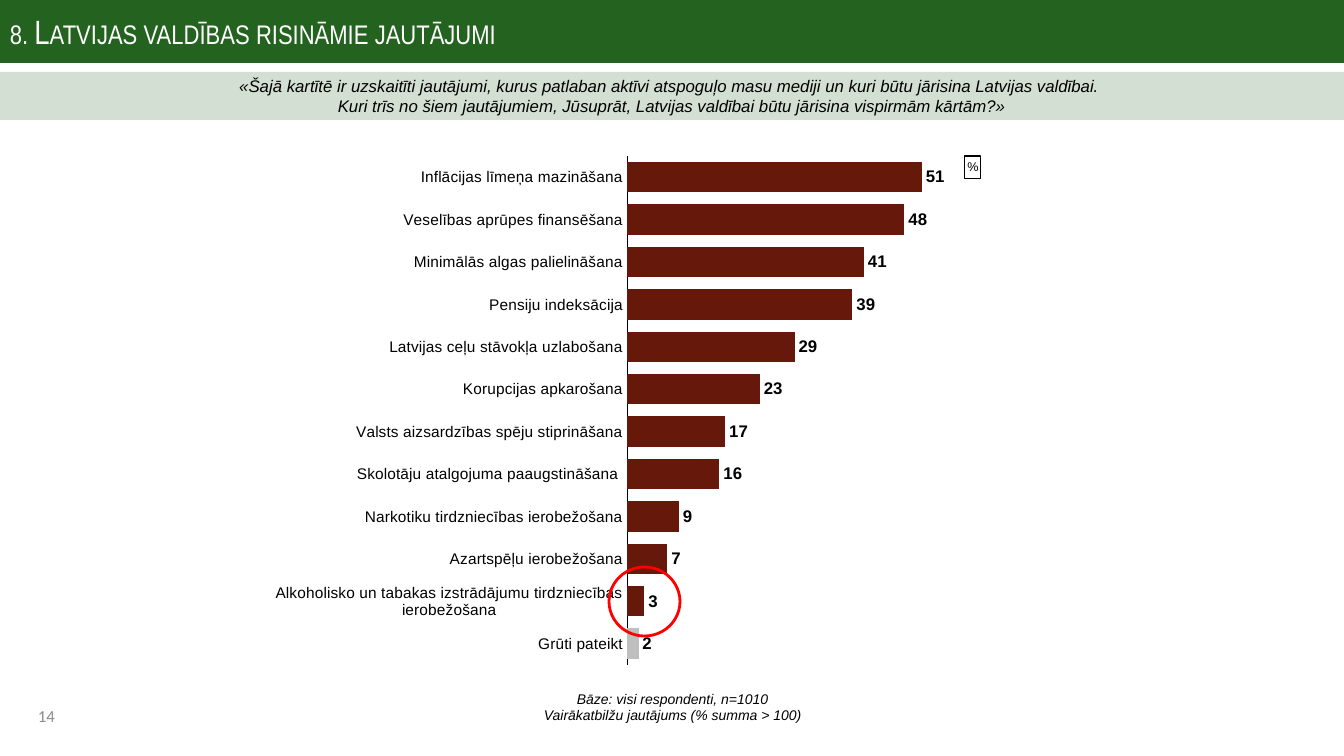
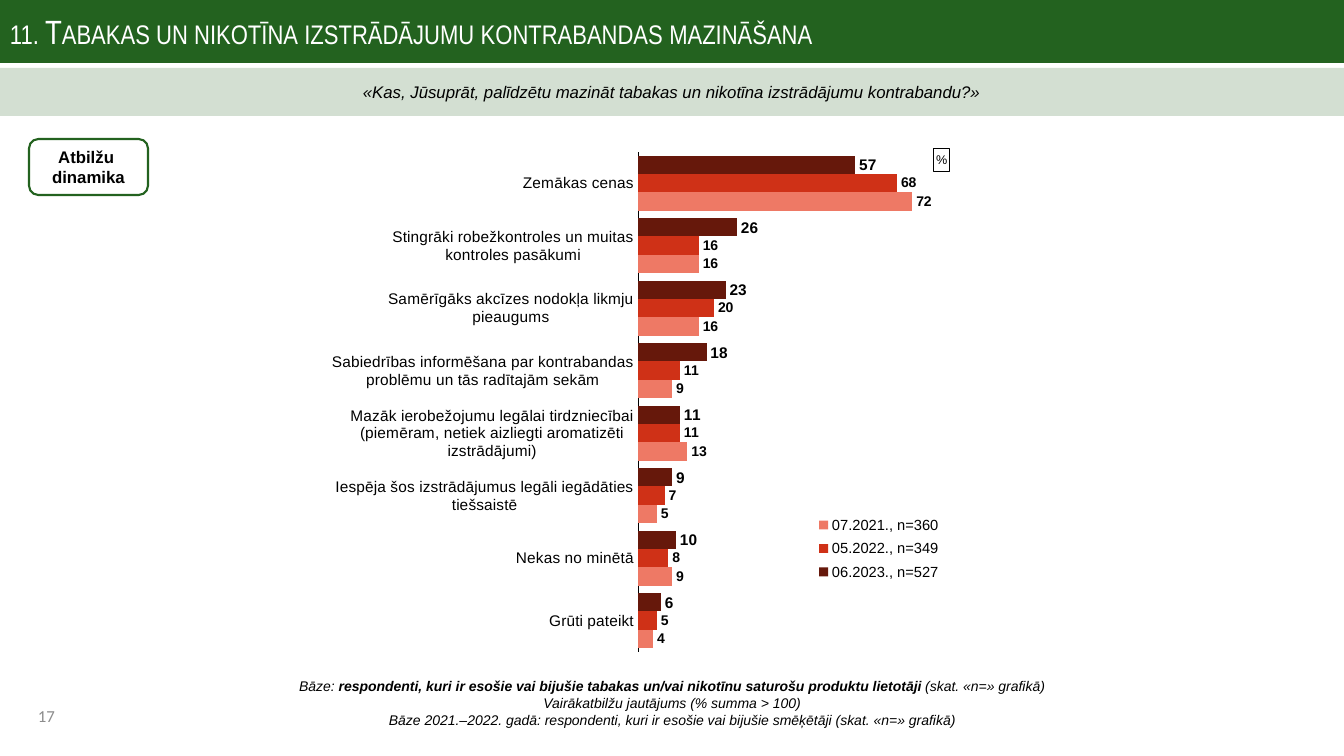
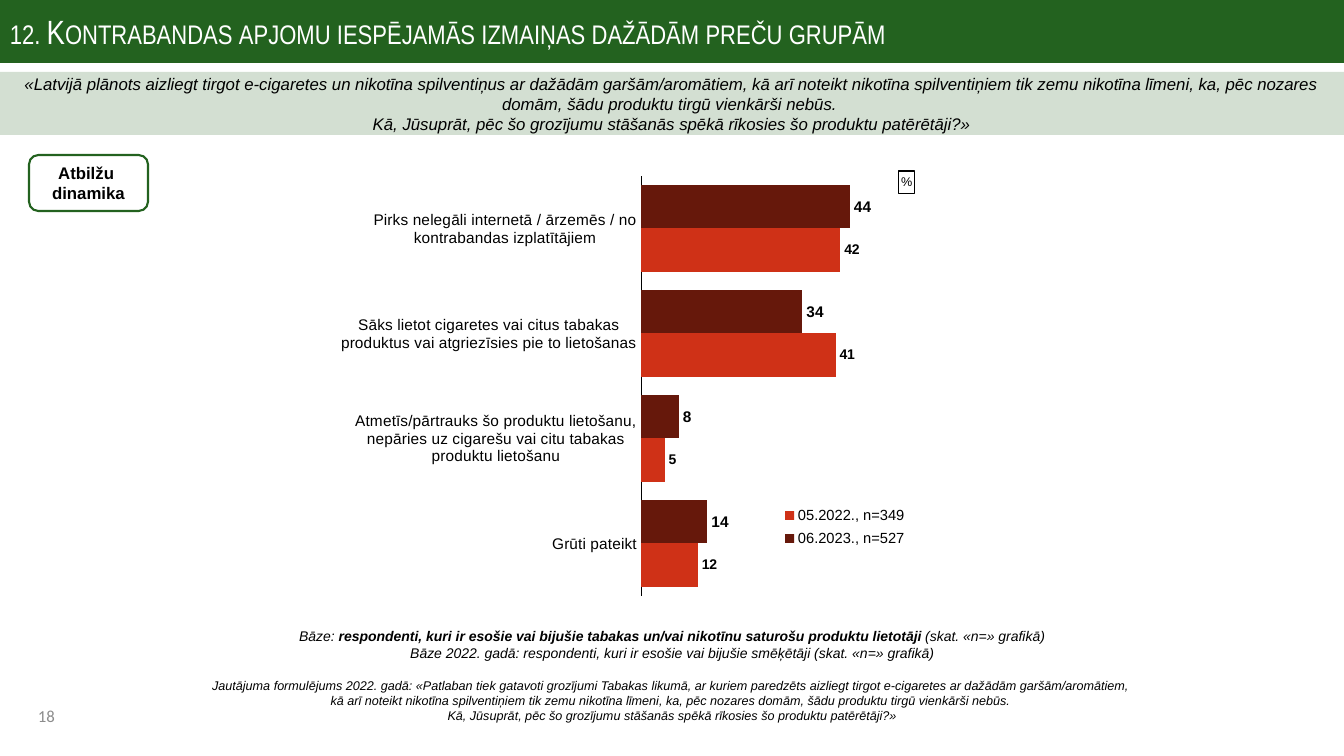
import copy
from dataclasses import dataclass

import pptx
import pptx.chart.data
import pptx.dml.color
import pptx.enum.chart
import pptx.enum.shapes
import pptx.enum.text
import pptx.oxml
import pptx.oxml.ns
import pptx.util

PX = 914400 / 100.8
SLIDE_WIDTH, SLIDE_HEIGHT = 1344, 756
SHAPE = pptx.enum.shapes.MSO_SHAPE
ALIGN = pptx.enum.text.PP_ALIGN
ANCHOR = pptx.enum.text.MSO_ANCHOR
qn = pptx.oxml.ns.qn


@dataclass(frozen=True)
class Theme:
    green: str = "23621F"
    white: str = "FFFFFF"
    black: str = "000000"
    grey: str = "8C8C8C"
    neutral_bar: str = "BFBFBF"
    highlight: str = "FF0000"
    wave_2023: str = "66180B"
    wave_2022: str = "CF3117"
    wave_2021: str = "EE7965"
    body_font: str = "Arial"
    title_font: str = "Arial Narrow"
    number_font: str = "Calibri"
    title_size: float = 24
    question_size: float = 12
    number_size: float = 12
    base_size: float = 10
    small_size: float = 9
    category_size: float = 11
    legend_size: float = 10.5
    band_alpha: int = 20


THEME = Theme()


@dataclass(frozen=True)
class Series:
    name: str
    color: str
    label_size: float
    values: tuple


def emu(box):
    return [pptx.util.Emu(round(length * PX)) for length in box]


def rgb(color):
    return pptx.dml.color.RGBColor.from_string(color)


def style_font(font, size, color=THEME.black, name=THEME.body_font, bold=False, italic=False):
    font.size = pptx.util.Pt(size)
    font.color.rgb = rgb(color)
    font.name = name
    font.bold = bold
    font.italic = italic


def write_text(shape, paragraphs, size, align=ALIGN.CENTER, anchor=ANCHOR.MIDDLE, **style):
    """Fill a shape; a tuple is one paragraph whose every second part is bold."""
    frame = shape.text_frame
    frame.word_wrap = True
    frame.vertical_anchor = anchor
    for index, content in enumerate(paragraphs):
        paragraph = frame.add_paragraph() if index else frame.paragraphs[0]
        paragraph.alignment = align
        if isinstance(content, str):
            paragraph.text = content
        else:
            for part in content:
                paragraph.add_run().text = part
        for run in paragraph.runs:
            style_font(run.font, size, **style)
        if not isinstance(content, str):
            for run in paragraph.runs[1::2]:
                run.font.bold = True
        for line_break in paragraph._p.findall(qn("a:br")):
            line_break.insert(0, copy.deepcopy(paragraph.runs[0]._r.rPr))
    return frame.paragraphs


def add_box(slide, kind, box, fill=None, line=None, line_width=1):
    shape = slide.shapes.add_shape(kind, *emu(box))
    shape.shadow.inherit = False
    if fill:
        shape.fill.solid()
        shape.fill.fore_color.rgb = rgb(fill)
    else:
        shape.fill.background()
    if line:
        shape.line.color.rgb = rgb(line)
        shape.line.width = pptx.util.Pt(line_width)
    else:
        shape.line.fill.background()
    return shape


def add_frame(presentation, title, number):
    """Add a slide with the title bar and page number that all slides share."""
    slide = presentation.slides.add_slide(presentation.slide_layouts[6])
    page_number = slide.shapes.add_textbox(*emu((28, 701, 143, 40)))
    write_text(page_number, [str(number)], THEME.number_size, ALIGN.LEFT, ANCHOR.TOP,
               color=THEME.grey, name=THEME.number_font)
    bar = add_box(slide, SHAPE.RECTANGLE, (0, 0, SLIDE_WIDTH, 63), THEME.green)
    paragraphs = write_text(bar, [title], THEME.title_size, ALIGN.LEFT,
                            color=THEME.white, name=THEME.title_font)
    paragraphs[0].runs[0]._r.rPr.set("cap", "small")
    return slide


def add_question(slide, top, height, paragraphs):
    band = add_box(slide, SHAPE.RECTANGLE, (0, top, SLIDE_WIDTH, height), THEME.green)
    color = band._element.spPr.find(qn("a:solidFill")).find(qn("a:srgbClr"))
    alpha = pptx.oxml.parse_xml(
        f'<a:alpha {pptx.oxml.ns.nsdecls("a")} val="{THEME.band_alpha * 1000}"/>')
    color.append(alpha)
    write_text(band, paragraphs, THEME.question_size, italic=True)


def add_base_note(slide, box, paragraphs):
    note = slide.shapes.add_textbox(*emu(box))
    return write_text(note, paragraphs, THEME.base_size, italic=True)


def add_trend_tag(slide, top):
    tag = add_box(slide, SHAPE.ROUNDED_RECTANGLE, (29, top, 119, 56),
                  line=THEME.green, line_width=1.5)
    write_text(tag, ["Atbilžu \ndinamika"], THEME.question_size, bold=True)


def set_layout(element, index, chart_box, part, inner=False, sized=True):
    """Pin a chart part, given in px from the chart's corner, at a child index."""
    for old in element.findall(qn("c:layout")):
        element.remove(old)
    width, height = chart_box[2:]
    target = '<c:layoutTarget val="inner"/>' if inner else ""
    modes = "".join(f'<c:{axis}Mode val="edge"/>' for axis in "xy")
    fractions = zip("xywh" if sized else "xy", part, (width, height, width, height))
    values = "".join(f'<c:{key} val="{length / whole:.4f}"/>'
                     for key, length, whole in fractions)
    element.insert(index, pptx.oxml.parse_xml(
        f'<c:layout {pptx.oxml.ns.nsdecls("c")}><c:manualLayout>'
        f'{target}{modes}{values}</c:manualLayout></c:layout>'))


def add_bar_chart(slide, box, categories, series_list, maximum, plot_box, unit_at,
                  legend_box=None):
    data = pptx.chart.data.CategoryChartData(number_format="0")
    data.categories = categories
    for series in series_list:
        data.add_series(series.name, series.values)
    chart = slide.shapes.add_chart(
        pptx.enum.chart.XL_CHART_TYPE.BAR_CLUSTERED, *emu(box), data).chart
    style_font(chart.font, THEME.small_size)
    space = chart._chartSpace

    chart.has_title = True
    title = chart.chart_title
    title.text_frame.text = "%"
    style_font(title.text_frame.paragraphs[0].runs[0].font, THEME.small_size)
    title.format.line.color.rgb = rgb(THEME.black)
    title.format.line.width = pptx.util.Pt(0.75)
    set_layout(space.xpath("c:chart/c:title")[0], 1, box, unit_at, sized=False)

    category_axis = chart.category_axis
    category_axis.reverse_order = True
    category_axis.major_tick_mark = pptx.enum.chart.XL_TICK_MARK.NONE
    category_axis.format.line.color.rgb = rgb(THEME.black)
    category_axis.format.line.width = pptx.util.Pt(0.25)
    style_font(category_axis.tick_labels.font, THEME.category_size)
    value_axis = chart.value_axis
    value_axis.visible = False
    value_axis.has_major_gridlines = False
    value_axis.minimum_scale = 0
    value_axis.maximum_scale = maximum
    value_axis.major_unit = 20

    plot = chart.plots[0]
    plot.gap_width = 40
    plot.overlap = 0
    plot.vary_by_categories = False
    for bars, series in zip(plot.series, series_list):
        bars.format.fill.solid()
        bars.format.fill.fore_color.rgb = rgb(series.color)
        bars.invert_if_negative = False
        labels = bars.data_labels
        labels.show_value = True
        labels.number_format = "0"
        labels.number_format_is_linked = False
        labels.position = pptx.enum.chart.XL_LABEL_POSITION.OUTSIDE_END
        style_font(labels.font, series.label_size, bold=True)
    set_layout(space.xpath("c:chart/c:plotArea")[0], 0, box, plot_box, inner=True)

    chart.has_legend = legend_box is not None
    if legend_box:
        chart.legend.position = pptx.enum.chart.XL_LEGEND_POSITION.RIGHT
        chart.legend.include_in_layout = False
        style_font(chart.legend.font, THEME.legend_size)
        set_layout(space.xpath("c:chart/c:legend")[0], 1, box, legend_box)
    return chart


def wave_2023(*values):
    return Series("06.2023., n=527", THEME.wave_2023, 11, values)


def wave_2022(*values):
    return Series("05.2022., n=349", THEME.wave_2022, 10, values)


def wave_2021(*values):
    return Series("07.2021., n=360", THEME.wave_2021, 10, values)


USER_BASE = (
    "Bāze: ",
    "respondenti, kuri ir esošie vai bijušie tabakas un/vai nikotīnu saturošu produktu lietotāji ",
    "(skat. «n=» grafikā)",
)
MULTIPLE_ANSWERS = "Vairākatbilžu jautājums (% summa > 100)"


def build_government_issues(presentation):
    slide = add_frame(presentation, "8. Latvijas valdības risināmie jautājumi", 14)
    add_base_note(slide, (480, 671, 385, 72),
                  ["Bāze: visi respondenti, n=1010", MULTIPLE_ANSWERS])
    add_question(slide, 72, 48, [
        "«Šajā kartītē ir uzskaitīti jautājumi, kurus patlaban aktīvi atspoguļo masu mediji "
        "un kuri būtu jārisina Latvijas valdībai. \n"
        "Kuri trīs no šiem jautājumiem, Jūsuprāt, Latvijas valdībai būtu jārisina "
        "vispirmām kārtām?»"])
    issues = {
        "Inflācijas līmeņa mazināšana": 51,
        "Veselības aprūpes finansēšana": 48,
        "Minimālās algas palielināšana": 41,
        "Pensiju indeksācija": 39,
        "Latvijas ceļu stāvokļa uzlabošana": 29,
        "Korupcijas apkarošana": 23,
        "Valsts aizsardzības spēju stiprināšana": 17,
        "Skolotāju atalgojuma paaugstināšana ": 16,
        "Narkotiku tirdzniecības ierobežošana": 9,
        "Azartspēļu ierobežošana": 7,
        "Alkoholisko un tabakas izstrādājumu tirdzniecības ierobežošana": 3,
        "Grūti pateikt": 2,
    }
    answers = Series("Series 1", THEME.wave_2023, 12, tuple(issues.values()))
    chart = add_bar_chart(slide, (275, 145, 723, 528), list(issues), [answers], 60,
                          plot_box=(352, 11, 347, 509), unit_at=(690, 11))
    undecided = chart.plots[0].series[0].points[len(issues) - 1]
    undecided.format.fill.solid()
    undecided.format.fill.fore_color.rgb = rgb(THEME.neutral_bar)
    add_box(slide, SHAPE.OVAL, (609, 567, 71, 69), line=THEME.highlight, line_width=2)


def build_contraband_reduction(presentation):
    slide = add_frame(
        presentation, "11. Tabakas un nikotīna izstrādājumu kontrabandas mazināšana", 17)
    add_base_note(slide, (0, 667, SLIDE_WIDTH, 72), [
        USER_BASE, MULTIPLE_ANSWERS,
        "Bāze 2021.–2022. gadā: respondenti, kuri ir esošie vai bijušie smēķētāji "
        "(skat. «n=» grafikā)"])
    add_question(slide, 68, 48, [
        "«Kas, Jūsuprāt, palīdzētu mazināt tabakas un nikotīna izstrādājumu kontrabandu?»"])
    measures = [
        "Zemākas cenas",
        "Stingrāki robežkontroles un muitas kontroles pasākumi",
        "Samērīgāks akcīzes nodokļa likmju pieaugums",
        "Sabiedrības informēšana par kontrabandas problēmu un tās radītajām sekām",
        "Mazāk ierobežojumu legālai tirdzniecībai (piemēram, netiek aizliegti aromatizēti "
        "izstrādājumi)",
        "Iespēja šos izstrādājumus legāli iegādāties tiešsaistē",
        "Nekas no minētā",
        "Grūti pateikt",
    ]
    waves = [wave_2023(57, 26, 23, 18, 11, 9, 10, 6),
             wave_2022(68, 16, 20, 11, 11, 7, 8, 5),
             wave_2021(72, 16, 16, 9, 13, 5, 9, 4)]
    add_bar_chart(slide, (331, 139, 631, 517), measures, waves, 85,
                  plot_box=(307, 13, 324, 500), unit_at=(603, 10),
                  legend_box=(483, 371, 130, 77))
    add_trend_tag(slide, 139)


def build_contraband_change(presentation):
    slide = add_frame(
        presentation, "12. Kontrabandas apjomu iespējamās izmaiņas dažādām preču grupām", 18)
    add_question(slide, 72, 63, [
        "«Latvijā plānots aizliegt tirgot e-cigaretes un nikotīna spilventiņus ar dažādām "
        "garšām/aromātiem, kā arī noteikt nikotīna spilventiņiem tik zemu nikotīna līmeni, ka, "
        "pēc nozares domām, šādu produktu tirgū vienkārši nebūs. ",
        "Kā, Jūsuprāt, pēc šo grozījumu stāšanās spēkā rīkosies šo produktu patērētāji?»"])
    paragraphs = add_base_note(slide, (0, 616, SLIDE_WIDTH, 119), [
        USER_BASE,
        "Bāze 2022. gadā: respondenti, kuri ir esošie vai bijušie smēķētāji "
        "(skat. «n=» grafikā)",
        "Jautājuma formulējums 2022. gadā: «Patlaban tiek gatavoti grozījumi Tabakas likumā, "
        "ar kuriem paredzēts aizliegt tirgot e-cigaretes ar dažādām garšām/aromātiem, \n"
        "kā arī noteikt nikotīna spilventiņiem tik zemu nikotīna līmeni, ka, pēc nozares domām, "
        "šādu produktu tirgū vienkārši nebūs. \n"
        "Kā, Jūsuprāt, pēc šo grozījumu stāšanās spēkā rīkosies šo produktu patērētāji?»"])
    wording = paragraphs[-1]
    wording.space_before = pptx.util.Pt(12)
    for properties in wording._p.iter(qn("a:rPr")):
        properties.set("sz", str(int(THEME.small_size * 100)))
    reactions = [
        "Pirks nelegāli internetā / ārzemēs / no kontrabandas izplatītājiem",
        "Sāks lietot cigaretes vai citus tabakas produktus vai atgriezīsies pie to lietošanas",
        "Atmetīs/pārtrauks šo produktu lietošanu, nepāries uz cigarešu vai citu tabakas "
        "produktu lietošanu",
        "Grūti pateikt",
    ]
    waves = [wave_2023(44, 34, 8, 14), wave_2022(42, 41, 5, 12)]
    add_bar_chart(slide, (323, 161, 603, 454), reactions, waves, 60,
                  plot_box=(318, 15, 285, 420), unit_at=(576, 10),
                  legend_box=(457, 340, 130, 52))
    add_trend_tag(slide, 155)


def main():
    presentation = pptx.Presentation()
    presentation.slide_width, presentation.slide_height = emu((SLIDE_WIDTH, SLIDE_HEIGHT))
    build_government_issues(presentation)
    build_contraband_reduction(presentation)
    build_contraband_change(presentation)
    presentation.save("out.pptx")


if __name__ == "__main__":
    main()
